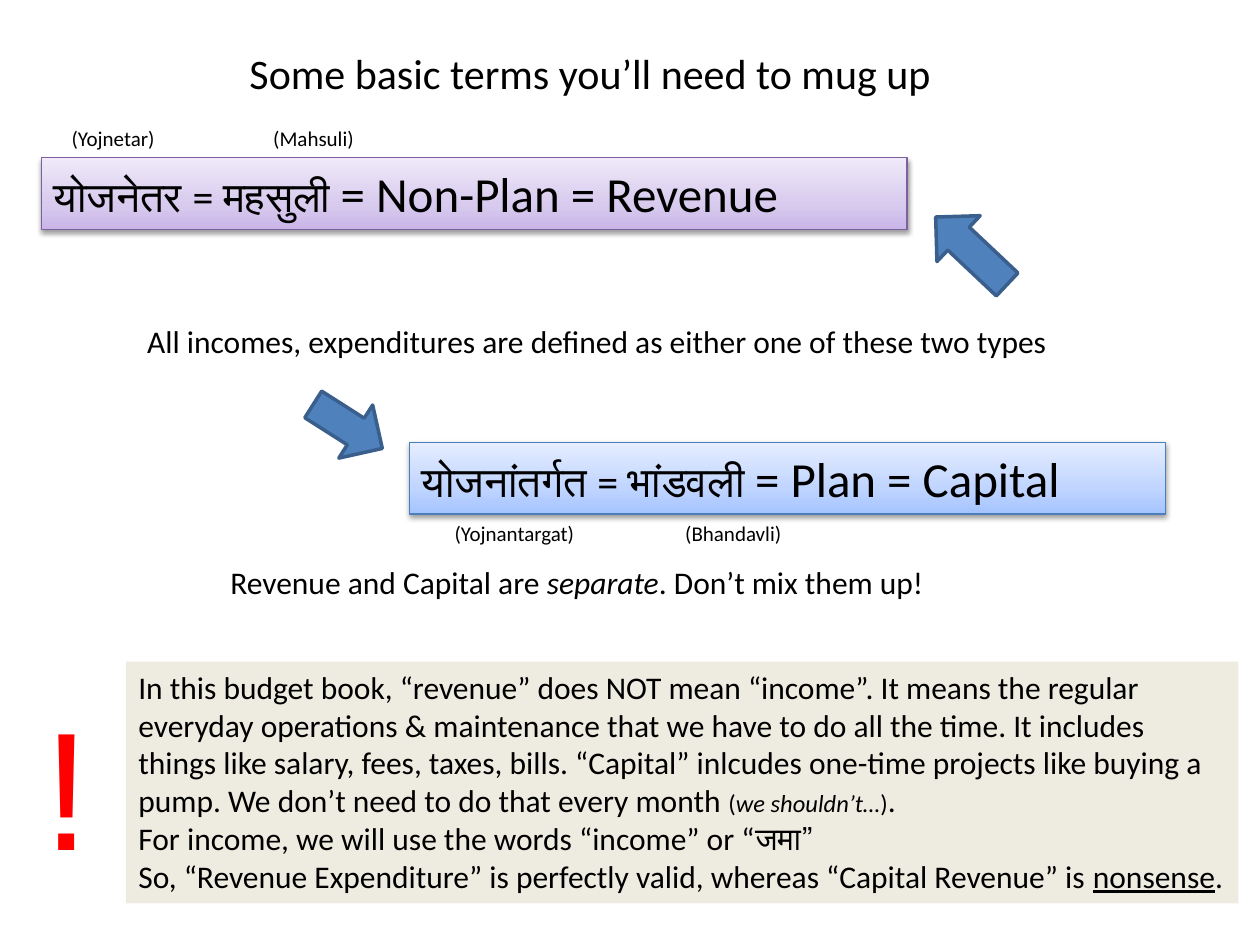
from copy import deepcopy

from lxml import etree
from pptx import Presentation
from pptx.dml.color import RGBColor
from pptx.enum.shapes import MSO_SHAPE
from pptx.enum.text import MSO_ANCHOR, MSO_AUTO_SIZE, PP_ALIGN
from pptx.oxml.ns import qn
from pptx.util import Inches, Pt

RECTANGLE, UP_ARROW = MSO_SHAPE.RECTANGLE, MSO_SHAPE.UP_ARROW
TOP, LEFT = MSO_ANCHOR.TOP, PP_ALIGN.LEFT
FIT_SHAPE = MSO_AUTO_SIZE.SHAPE_TO_FIT_TEXT
TITLE_ONLY = 5

COLOURS = {
    "text": "000000",
    "alert": "FF0000",
    "note": "EEECE1",
    "arrow": "4F81BD",
    "arrow line": "3A5F8C",
    "revenue line": "7D60A0",
    "capital line": "4B7EBC",
}
GRADIENTS = {
    "revenue": ["C9B5E8", "D8CBEE", "F0EAF9"],
    "capital": ["A4C4FF", "BFD4FF", "E6EEFF"],
}
GRADIENT_POSITIONS = [0, 0.35, 1]


def rgb(name):
    return RGBColor.from_string(COLOURS[name])


class SlideBuilder:
    """Holds the text style and the current slide."""

    def __init__(self, slide):
        self.slide = slide
        self.style = {"name": "Calibri", "size": 18}

    def fill_text(self, shape, paragraphs, wrap=False, colour="text", **style):
        """Fill a shape with paragraphs, each a list of (text, font values)."""
        frame = shape.text_frame
        frame.word_wrap = wrap
        frame.auto_size = FIT_SHAPE
        frame.vertical_anchor = TOP
        for index, spans in enumerate(paragraphs):
            para = frame.add_paragraph() if index else frame.paragraphs[0]
            para.alignment = LEFT
            for text, changes in spans:
                span = para.add_run()
                span.text = text
                span.font.color.rgb = rgb(colour)
                values = {**self.style, **style, **changes}
                values["size"] = Pt(values["size"])
                for key, value in values.items():
                    setattr(span.font, key, value)

    def title(self, text, left, top, width, height):
        box = self.slide.shapes.title
        place = {"left": left, "top": top, "width": width, "height": height}
        for key, value in place.items():
            setattr(box, key, Inches(value))
        self.fill_text(box, [[(text, {})]], size=24)

    def label(self, spans, left, top, width, height, **style):
        box = self.slide.shapes.add_textbox(*map(Inches, (left, top, width, height)))
        self.fill_text(box, [spans], **style)

    def shape(self, kind, left, top, width, height):
        shape = self.slide.shapes.add_shape(kind, *map(Inches, (left, top, width, height)))
        shape.shadow.inherit = False
        return shape

    def banner(self, kind, hindi, english, *place):
        box = self.shape(RECTANGLE, *place)
        # Three-stop gradient, running from bottom to top
        box.fill.gradient()
        box.fill.gradient_angle = 90
        properties = box.element.spPr
        stop_list = properties.find(".//" + qn("a:gsLst"))
        stop_list.append(deepcopy(stop_list[-1]))
        stops = zip(box.fill.gradient_stops, GRADIENT_POSITIONS, GRADIENTS[kind])
        for stop, position, colour in stops:
            stop.position = position
            stop.color.rgb = RGBColor.from_string(colour)
        box.line.color.rgb = rgb(f"{kind} line")
        box.line.width = Pt(0.75)
        # Soft shadow below
        effects = properties.find(qn("a:effectLst"))
        shadow = etree.SubElement(
            effects, qn("a:outerShdw"), blurRad=str(Pt(3.1)), dist=str(Pt(1.6)),
            dir="5400000", rotWithShape="0")
        colour = etree.SubElement(shadow, qn("a:srgbClr"), val="000000")
        etree.SubElement(colour, qn("a:alpha"), val="38000")
        self.fill_text(box, [[(hindi, {"size": 24}), (english, {"size": 28})]], wrap=True)

    def note(self, paragraphs, *place):
        box = self.shape(RECTANGLE, *place)
        box.fill.solid()
        box.fill.fore_color.rgb = rgb("note")
        box.line.fill.background()
        self.fill_text(box, paragraphs, wrap=True)

    def arrow(self, rotation, *place):
        arrow = self.shape(UP_ARROW, *place)
        arrow.rotation = rotation
        arrow.fill.solid()
        arrow.fill.fore_color.rgb = rgb("arrow")
        arrow.line.color.rgb = rgb("arrow line")
        arrow.line.width = Pt(2)


def main():
    deck = Presentation()
    deck.slide_width, deck.slide_height = Inches(10), Inches(7.5)
    page = SlideBuilder(deck.slides.add_slide(deck.slide_layouts[TITLE_ONLY]))

    page.title("Some basic terms you’ll need to mug up", 1.88, 0.33, 5.66, 0.5)

    # The two types of money, and the note that explains them
    page.banner("revenue", "योजनेतर = महसुली ", "= Non-Plan = Revenue",
                0.33, 1.25, 6.87, 0.57)
    small = {"size": 14}
    page.note([
        [("In this budget book, “revenue” does NOT mean “income”. It means the regular "
          "everyday operations & maintenance that we have to do all the time. It includes "
          "things like salary, fees, taxes, bills. “Capital” inlcudes one-time projects "
          "like buying a pump. We don’t need to do that every month ", {}),
         ("(", small), ("we shouldn’t…", {**small, "italic": True}), (")", small),
         (".", {})],
        [("For income, we will use the words “income” or “जमा”", {})],
        [("So, “Revenue Expenditure” is perfectly valid, whereas “Capital Revenue” is ", {}),
         ("nonsense", {"underline": True}), (".", {})],
    ], 1, 5.25, 8.83, 1.92)
    page.banner("capital", "योजनांतर्गत = भांडवली ", "= Plan = Capital",
                3.25, 3.51, 6, 0.57)

    # Statement with an arrow to each type
    page.label([("All incomes, expenditures are defined as either one of these two types", {})],
               1.07, 2.51, 7.43, 0.4)
    page.arrow(313.3, 7.46, 1.6, 0.5, 0.78)
    page.arrow(122.5, 2.51, 3.06, 0.5, 0.65)

    # Warnings
    page.label([("!", {})], 0.25, 5.37, 0.62, 1.72, colour="alert", name="Arial", size=96)
    page.label([("Revenue and Capital are ", {}), ("separate", {"italic": True}),
                (". Don’t mix them up!", {})], 1.73, 4.42, 5.77, 0.4)

    # Pronunciations
    for text, left, top, width in [
        ("(Yojnetar)", 0.47, 0.95, 0.87),
        ("(Mahsuli)", 2.07, 0.95, 0.85),
        ("(Yojnantargat)", 3.51, 4.08, 1.16),
        ("(Bhandavli)", 5.34, 4.08, 0.97),
    ]:
        page.label([(text, {})], left, top, width, 0.3, size=12)

    deck.save("out.pptx")


if __name__ == "__main__":
    main()
